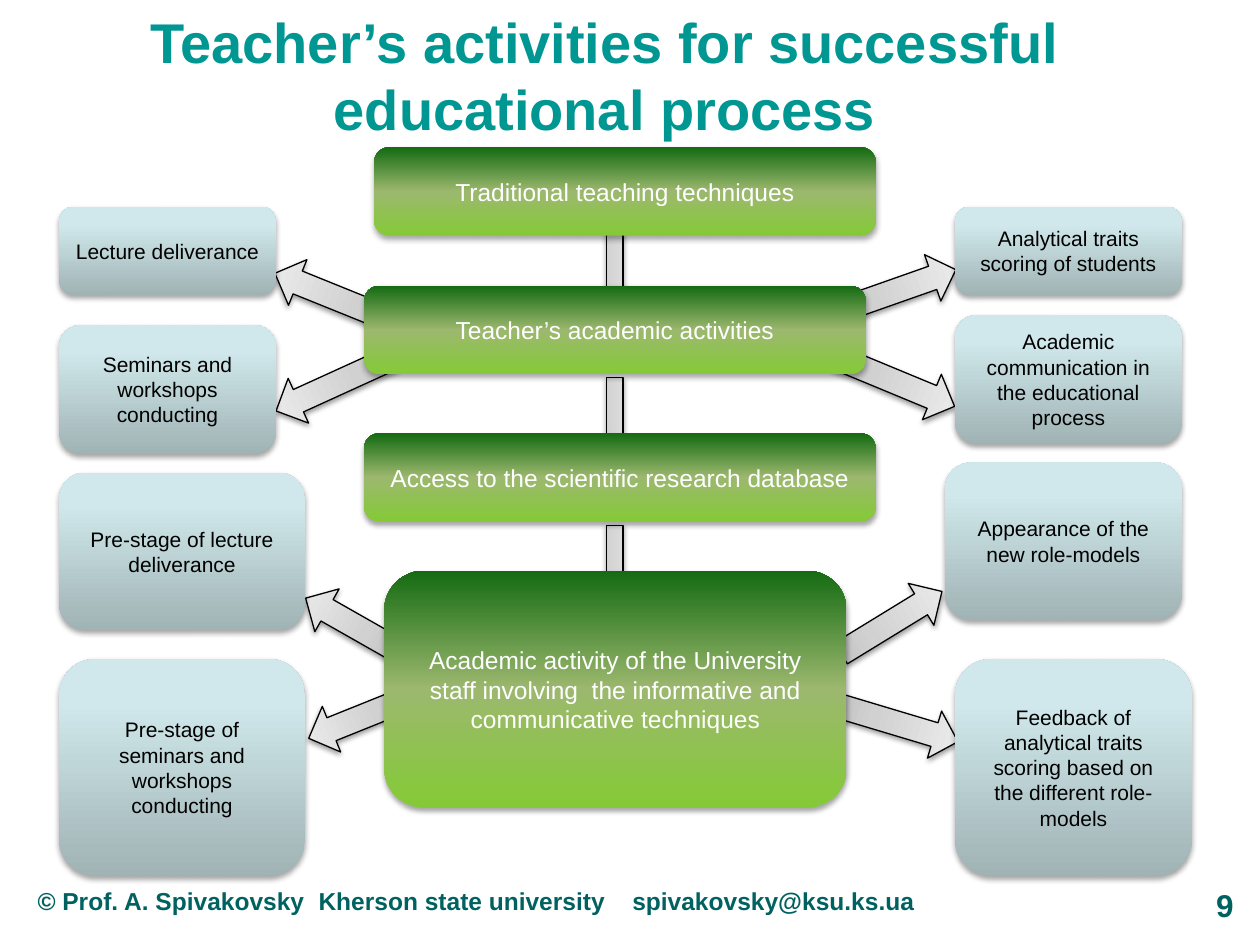
"""Build the slide on a teacher's activities in the educational process."""
from lxml import etree
from pptx import Presentation
from pptx import util as u
from pptx.dml.color import RGBColor
from pptx.enum import shapes, text
from pptx.oxml.ns import qn

PX = u.Inches(1) // 100
FONT = "Arial"
GREY = [(0, "BDBDBD"), (35, "D1D1D1"), (100, "EEEEEE")]
GREEN = [(0, "84CA36"), (50, "9CB86E"), (100, "156B13")]
BLUE = [(0, "A0B3B5"), (80, "D0E8EB"), (100, "D1EAEC")]

ARROW_WIDTH = 39
ARROWS = [
    (691, 252, 102, 112.5),
    (246, 185, 102, 292),
    (246, 254, 102, 245.5),
    (257, 455, 78, 299.6),
    (264, 529, 83, 248.1),
    (688, 447, 94, 58.5),
    (692, 523, 102, 106.7),
    (691, 180, 102, 70.6),
]
LINK_TOPS = [301, 418, 184]
STAGES = [
    ((297, 117, 398, 70), "Traditional teaching techniques"),
    ((289, 227, 398, 70), "Teacher’s academic activities"),
    ((289, 344, 406, 70), "Access to the scientific research database"),
    ((305, 453, 367, 188), "Academic activity of the University staff involving  "
     "the informative and communicative techniques"),
]
ACTIVITIES = [
    ((47, 164, 172, 70), "Lecture deliverance"),
    ((47, 258, 172, 102), "Seminars and workshops conducting"),
    ((758, 164, 180, 70), "Analytical traits scoring of students"),
    ((758, 250, 180, 102), "Academic communication in the educational process"),
    ((47, 375, 195, 125), "Pre-stage of lecture deliverance"),
    ((47, 523, 195, 172), "Pre-stage of seminars and workshops conducting"),
    ((750, 367, 188, 125), "Appearance of the new role-models"),
    ((758, 523, 188, 172), "Feedback of analytical traits scoring based on "
     "the different role-models"),
]


def rgb(value):
    """Return the colour for a hex string."""
    return RGBColor.from_string(value)


def emu(lengths):
    """Turn px lengths into EMU."""
    return [length * PX for length in lengths]


def add_node(parent, tag, **attributes):
    """Append a DrawingML element and return it."""
    values = {name: str(value) for name, value in attributes.items()}
    return etree.SubElement(parent, qn(tag), values)


def set_gradient(shape, stops):
    """Fill a shape with a gradient rising from bottom to top."""
    shape.fill.gradient()
    shape.fill.gradient_angle = 90
    stop_list = shape.element.spPr.find(qn("a:gradFill")).find(qn("a:gsLst"))
    for old_stop in list(stop_list):
        stop_list.remove(old_stop)
    for position, color in stops:
        stop = add_node(stop_list, "a:gs", pos=position * 1000)
        add_node(stop, "a:srgbClr", val=color)


def set_shadow(shape, alpha, distance):
    """Give a shape a soft black shadow below it."""
    shape.shadow.inherit = False
    effects = shape.element.spPr.find(qn("a:effectLst"))
    shadow = add_node(effects, "a:outerShdw", blurRad=u.Pt(3.1), dist=u.Pt(distance),
                      dir=90 * 60000, rotWithShape=0)
    color = add_node(shadow, "a:srgbClr", val="000000")
    add_node(color, "a:alpha", val=alpha * 1000)


def write(frame, words, size, color, align, bold=False):
    """Write one formatted paragraph and return it."""
    frame.word_wrap = True
    paragraph = frame.paragraphs[0]
    paragraph.text = words
    paragraph.alignment = align
    for run in paragraph.runs:
        run.font.name = FONT
        run.font.size = u.Pt(size)
        run.font.bold = bold
        run.font.color.rgb = rgb(color)
    return paragraph


def add_pointer(slide, kind, place, rotation):
    """Add a rotated grey arrow or link bar."""
    pointer = slide.shapes.add_shape(kind, *emu(place))
    pointer.rotation = rotation
    set_gradient(pointer, GREY)
    pointer.line.color.rgb = rgb("000000")
    pointer.line.width = u.Pt(0.75)
    set_shadow(pointer, 38, 1.6)


def add_box(slide, place, words, stops, size, color):
    """Add a rounded gradient box with centred text."""
    box = slide.shapes.add_shape(shapes.MSO_SHAPE.ROUNDED_RECTANGLE, *emu(place))
    set_gradient(box, stops)
    box.line.fill.background()
    set_shadow(box, 35, 1.8)
    box.text_frame.vertical_anchor = text.MSO_ANCHOR.MIDDLE
    write(box.text_frame, words, size, color, text.PP_ALIGN.CENTER)


def add_label(slide, place, words, size, color, align):
    """Add a bold text box and return its frame and paragraph."""
    frame = slide.shapes.add_textbox(*emu(place)).text_frame
    return frame, write(frame, words, size, color, align, bold=True)


def add_title(slide):
    """Add the outlined slide title."""
    frame, paragraph = add_label(
        slide, (30, 8, 900, 102), "Teacher’s activities for successful educational process",
        32, "009692", text.PP_ALIGN.CENTER)
    frame.vertical_anchor = text.MSO_ANCHOR.MIDDLE
    properties = paragraph.runs[0].font._element
    outline = add_node(properties, "a:ln", w=u.Pt(0.75))
    add_node(add_node(outline, "a:solidFill"), "a:srgbClr", val="224B50")
    properties.insert(0, outline)


def add_footer(slide):
    """Add the copyright line, spaced by tab stops."""
    _, paragraph = add_label(
        slide, (20, 698, 890, 37),
        "© Prof. A. Spivakovsky\tKherson state university\tspivakovsky@ksu.ks.ua",
        14, "006260", text.PP_ALIGN.LEFT)
    tabs = add_node(paragraph._p.get_or_add_pPr(), "a:tabLst")
    for position in (223, 472):
        add_node(tabs, "a:tab", pos=position * PX, algn="l")


def main():
    """Build and save the slide."""
    deck = Presentation()
    deck.slide_width, deck.slide_height = emu((1000, 750))
    slide = deck.slides.add_slide(deck.slide_layouts[6])
    for left, top, length, rotation in ARROWS:
        add_pointer(slide, shapes.MSO_SHAPE.UP_ARROW,
                    (left, top, ARROW_WIDTH, length), rotation)
    for top in LINK_TOPS:
        add_pointer(slide, shapes.MSO_SHAPE.MATH_MINUS, (449, top, 78, 55), 90)
    add_label(slide, (925, 698, 64, 37), "9", 18, "006260", text.PP_ALIGN.RIGHT)
    add_title(slide)
    for place, words in STAGES:
        add_box(slide, place, words, GREEN, 14, "FFFFFF")
    for place, words in ACTIVITIES:
        add_box(slide, place, words, BLUE, 12, "000000")
    add_footer(slide)
    deck.save("out.pptx")


if __name__ == "__main__":
    main()
